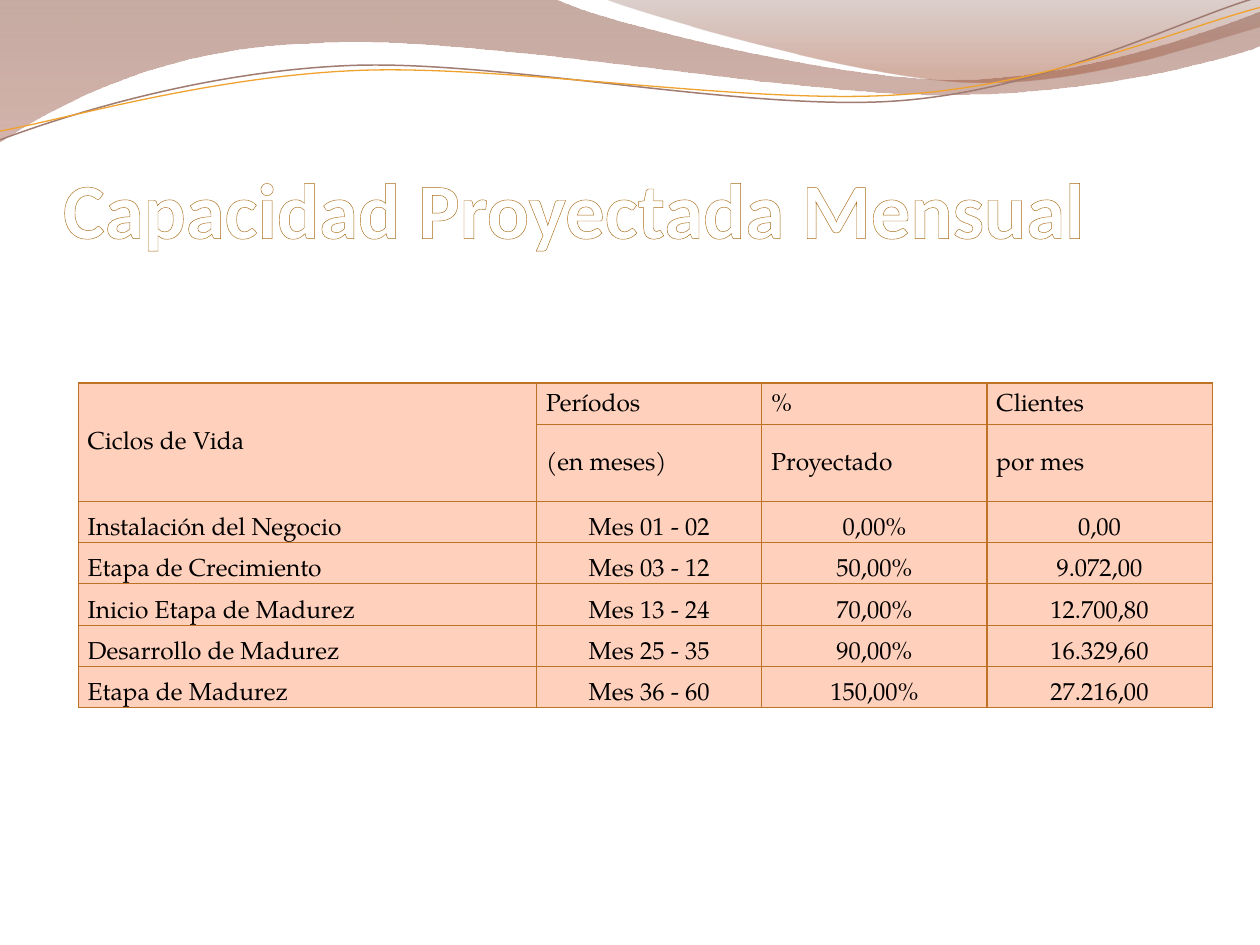
from dataclasses import dataclass
from math import cos, radians, sin

from lxml.etree import SubElement
from pptx import Presentation
from pptx.dml.color import RGBColor
from pptx.enum.text import MSO_ANCHOR as Anchor, MSO_AUTO_SIZE as AutoSize, PP_ALIGN as Align
from pptx.oxml.ns import qn
from pptx.shapes.autoshape import Shape
from pptx.slide import Slide
from pptx.table import _Cell as Cell
from pptx.util import Inches, Pt

Point = tuple[float, float]
Segment = tuple[Point, ...]

STRAND_ROTATION = 357.3
BORDER_COLOR = "C07224"
CELL_COLOR = "FFD0BC"
TITLE_OUTLINE = "A96A14"


@dataclass
class GradientStop:
    position: float
    color: str
    opacity: int


@dataclass
class Band:
    """Filled wave: each segment is a line (1 point) or a cubic curve (3 points)."""
    start: Point
    segments: list[Segment]
    stops: list[GradientStop]


@dataclass
class Strand:
    """Thin open wave line, given as it shows after turning about its center."""
    start: Point
    segments: list[Segment]
    center: Point
    color: str
    width: float


BANDS = [
    Band((0, 0),
         [((4.4, -0.01),),
          ((4.76, 0.17), (6.64, 0.63), (7.58, 0.63)),
          ((8.53, 0.63), (9.58, 0.26), (10, 0.09)),
          ((10.01, 0.36),),
          ((9.83, 0.44), (8.7, 0.76), (7.46, 0.75)),
          ((6.22, 0.75), (3.82, 0.28), (2.57, 0.34)),
          ((1.29, 0.36), (0.46, 0.83), (-0.01, 1.13)),
          ((0, 0),)],
         [GradientStop(0, "814733", 45), GradientStop(1, "B17667", 55)]),
    Band((4.79, -0.01),
         [((5.09, 0.11), (6.82, 0.62), (7.69, 0.65)),
          ((8.56, 0.69), (9.61, 0.32), (10, 0.21)),
          ((10, 0),),
          ((4.79, -0.01),)],
         [GradientStop(0, "8C6359", 30), GradientStop(0.8, "A15135", 45)]),
]

STRANDS = [
    Strand((0, 1.11),
           [((0.48, 0.93), (1.58, 0.57), (2.77, 0.52)),
            ((3.95, 0.47), (5.93, 0.89), (7.13, 0.8)),
            ((8.33, 0.71), (9.38, 0.15), (9.98, -0.02))],
           (4.99, 0.58), "A07B71", 0.85),
    Strand((0, 1.04),
           [((0.47, 0.96), (1.64, 0.61), (2.83, 0.56)),
            ((4.03, 0.51), (5.97, 0.84), (7.17, 0.75)),
            ((8.36, 0.67), (9.41, 0.21), (10, 0.06))],
           (5, 0.59), "F0A22E", 0.75),
]

TABLE_WIDTH, TABLE_HEIGHT = 9, 2.58
FIRST_COLUMN, SECOND_ROW = 3.64, 0.61
COLUMN_WIDTHS = [FIRST_COLUMN] + [(TABLE_WIDTH - FIRST_COLUMN) / 3] * 3
ROW_HEIGHTS = [(TABLE_HEIGHT - SECOND_ROW) / 6] * 7
ROW_HEIGHTS[1] = SECOND_ROW
HEADER_ROWS = 2
TABLE_ROWS = [
    ("Ciclos de Vida", "Períodos", "%", "Clientes"),
    ("", "(en meses)", "Proyectado", "por mes"),
    ("Instalación del Negocio", "Mes 01 - 02", "0,00%", "0,00"),
    ("Etapa de Crecimiento", "Mes 03 - 12", "50,00%", "9.072,00"),
    ("Inicio Etapa de Madurez", "Mes 13 - 24", "70,00%", "12.700,80"),
    ("Desarrollo de Madurez", "Mes 25 - 35", "90,00%", "16.329,60"),
    ("Etapa de Madurez", "Mes 36 - 60", "150,00%", "27.216,00"),
]


def rgb(color: str) -> RGBColor:
    return RGBColor.from_string(color)


def add_solid_fill(parent, color: str) -> None:
    SubElement(SubElement(parent, qn("a:solidFill")), qn("a:srgbClr"), val=color)


def rotate(point: Point, center: Point, degrees: float) -> Point:
    angle = radians(degrees)
    x, y = point[0] - center[0], point[1] - center[1]
    return (center[0] + x * cos(angle) - y * sin(angle),
            center[1] + x * sin(angle) + y * cos(angle))


def add_wave(slide: Slide, start: Point, segments: list[Segment], close: bool) -> Shape:
    """Build a freeform through all points, then join each triple into a cubic curve."""
    points = [start, *(point for segment in segments for point in segment)]
    corners = [(Inches(x), Inches(y)) for x, y in points]
    builder = slide.shapes.build_freeform(*corners[0])
    builder.add_line_segments(corners[1:], close=close)
    shape = builder.convert_to_shape()
    shape.shadow.inherit = False
    lines = iter(list(shape._element.spPr.iter(qn("a:lnTo"))))
    for segment in segments:
        group = [next(lines) for _ in segment]
        if len(group) == 3:
            group[0].tag = qn("a:cubicBezTo")
            for line in group[1:]:
                group[0].append(line[0])
                line.getparent().remove(line)
    return shape


def add_band(slide: Slide, band: Band) -> None:
    shape = add_wave(slide, band.start, band.segments, close=True)
    shape.line.fill.background()
    shape.fill.gradient()
    shape.fill.gradient_angle = 270
    for target, stop in zip(shape.fill.gradient_stops, band.stops):
        target.color.rgb = rgb(stop.color)
        target.position = stop.position
    for color, stop in zip(shape._element.spPr.iter(qn("a:srgbClr")), band.stops):
        SubElement(color, qn("a:alpha"), val=str(stop.opacity * 1000))


def add_strand(slide: Slide, strand: Strand) -> None:
    def level(point: Point) -> Point:
        return rotate(point, strand.center, -STRAND_ROTATION)

    segments = [tuple(map(level, segment)) for segment in strand.segments]
    shape = add_wave(slide, level(strand.start), segments, close=False)
    shape.rotation = STRAND_ROTATION
    shape.fill.background()
    shape.line.color.rgb = rgb(strand.color)
    shape.line.width = Pt(strand.width)


def format_title(title: Shape, text: str) -> None:
    title.left, title.top, title.width, title.height = map(Inches, (0.5, 0.77, 9, 1.25))
    frame = title.text_frame
    frame.text = text
    frame.auto_size = AutoSize.NONE
    frame.word_wrap = True
    frame.vertical_anchor = Anchor.BOTTOM
    frame.margin_left = frame.margin_right = frame.margin_bottom = 0
    frame.margin_top = Inches(0.05)
    paragraph = frame.paragraphs[0]
    paragraph.alignment = Align.LEFT
    run = paragraph.runs[0]
    run.font.name, run.font.size, run.font.bold = "Calibri", Pt(45), True
    run.font.color.rgb = rgb("FFFFFF")
    properties = run._r.get_or_add_rPr()
    outline = SubElement(properties, qn("a:ln"), w=str(Pt(2.48)))
    add_solid_fill(outline, TITLE_OUTLINE)
    properties.insert(0, outline)


def format_cell(cell: Cell, text: str, anchor: Anchor, alignment: Align) -> None:
    cell.text_frame.text = text
    cell.vertical_anchor = anchor
    cell.margin_left = cell.margin_right = Pt(5.4)
    cell.margin_top = cell.margin_bottom = 0
    paragraph = cell.text_frame.paragraphs[0]
    paragraph.alignment = alignment
    paragraph.line_spacing = 1.15
    for run in paragraph.runs:
        run.font.name, run.font.size = "TeX Gyre Pagella", Pt(14)
        run.font.color.rgb = rgb("000000")
    properties = cell._tc.get_or_add_tcPr()
    for side in ("lnL", "lnR", "lnT", "lnB"):
        add_solid_fill(SubElement(properties, qn(f"a:{side}"), w=str(Pt(0.75))), BORDER_COLOR)
    cell.fill.solid()
    cell.fill.fore_color.rgb = rgb(CELL_COLOR)


def add_capacity_table(slide: Slide) -> None:
    table = slide.shapes.add_table(len(ROW_HEIGHTS), len(COLUMN_WIDTHS), *map(
        Inches, (0.62, 3.04, TABLE_WIDTH, TABLE_HEIGHT))).table
    table.first_row = table.horz_banding = False
    for column, width in zip(table.columns, COLUMN_WIDTHS):
        column.width = Inches(width)
    for row, height in zip(table.rows, ROW_HEIGHTS):
        row.height = Inches(height)
    for i, texts in enumerate(TABLE_ROWS):
        is_header = i < HEADER_ROWS
        for j, text in enumerate(texts):
            format_cell(table.cell(i, j), text, Anchor.MIDDLE if is_header else Anchor.BOTTOM,
                        Align.LEFT if is_header or j == 0 else Align.CENTER)
    table.cell(0, 0).merge(table.cell(HEADER_ROWS - 1, 0))


presentation = Presentation()
presentation.slide_width, presentation.slide_height = Inches(10), Inches(7.5)
slide = presentation.slides.add_slide(presentation.slide_layouts[5])
for band in BANDS:
    add_band(slide, band)
for strand in STRANDS:
    add_strand(slide, strand)
format_title(slide.shapes.title, "Capacidad Proyectada Mensual")
add_capacity_table(slide)
presentation.save("out.pptx")
